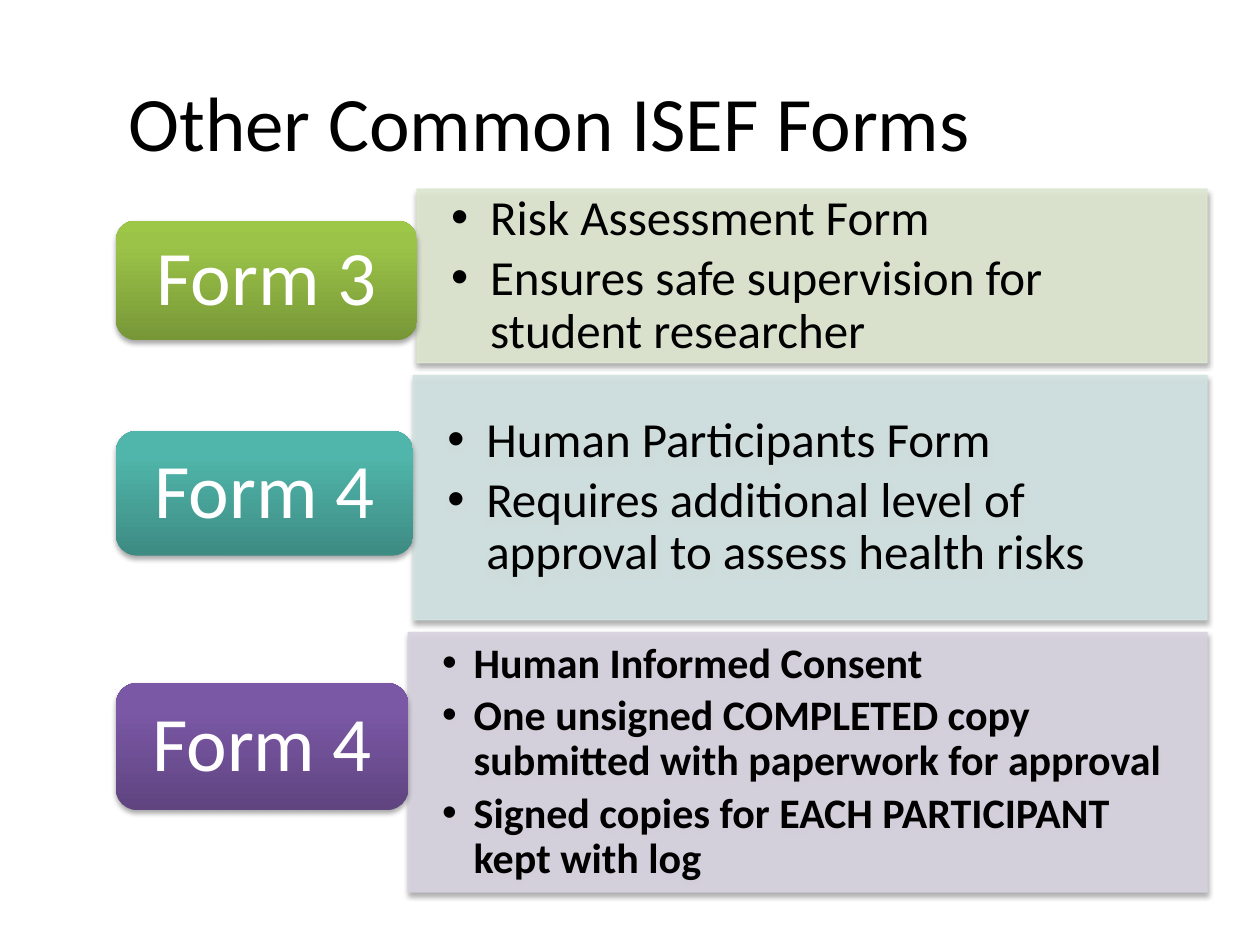
"""Build the slide that pairs each common ISEF form with its purpose."""
from copy import deepcopy
from dataclasses import dataclass

from pptx import Presentation
from pptx.dml.color import RGBColor
from pptx.enum.shapes import MSO_SHAPE
from pptx.enum.text import MSO_ANCHOR, PP_ALIGN
from pptx.oxml.ns import qn
from pptx.util import Inches, Pt

RECTANGLE = MSO_SHAPE.RECTANGLE
ROUNDED = MSO_SHAPE.ROUNDED_RECTANGLE
MIDDLE = MSO_ANCHOR.MIDDLE
LEFT, CENTER = PP_ALIGN.LEFT, PP_ALIGN.CENTER
TITLE_ONLY = 5
PAGE_WIDTH, PAGE_HEIGHT = Inches(10), Inches(7.5)
COLUMNS, ROWS = 1000, 750
LABEL_LEFT, PANEL_RIGHT = 92, 958
FIRST_TOP, PANEL_GAP = 150, 10


@dataclass(frozen=True)
class Theme:
    """Colours, font and type sizes of the slide."""
    font: str = "Calibri"
    ink: str = "000000"
    label_ink: str = "FFFFFF"
    heading_size: int = 44
    line_spacing: float = 0.9
    label_after: int = 15
    bullet_after: int = 4
    panel_opacity: int = 90
    shadow_opacity: int = 35


@dataclass(frozen=True)
class Area:
    """A rectangle in grid columns and rows."""
    left: float
    top: float
    width: float
    height: float

    def emu(self) -> tuple[int, int, int, int]:
        """Convert the grid rectangle to slide lengths."""
        across, down = PAGE_WIDTH / COLUMNS, PAGE_HEIGHT / ROWS
        return (round(self.left * across), round(self.top * down),
                round(self.width * across), round(self.height * down))


@dataclass(frozen=True)
class Form:
    """One form: its label, its panel and the points it makes."""
    name: str
    label_top: float
    label_width: float
    label_height: float
    gradient: tuple[str, str, str]
    panel_height: float
    panel_color: str
    points: tuple[str, ...]
    size: int = 28
    indent: float = 0.31
    bold: bool = False


THEME = Theme()
FORMS = (
    Form("Form 3", 175, 239, 95, ("779737", "9BC348", "9DC746"), 138, "DEE7D1",
         ("Risk Assessment Form",
          "Ensures safe supervision for student researcher")),
    Form("Form 4", 342, 236, 99, ("3D8B83", "50B5AA", "4EB8AC"), 194, "D2E3E2",
         ("Human Participants Form",
          "Requires additional level of approval to assess health risks")),
    Form("Form 4", 542, 232, 101, ("5F4480", "7B58A6", "7C57A8"), 206, "D8D3E0",
         ("Human Informed Consent",
          "One unsigned COMPLETED copy submitted with paperwork for approval",
          "Signed copies for EACH PARTICIPANT kept with log"),
         size=24, indent=0.25, bold=True),
)


def add_child(parent, tag: str, **attributes):
    """Append a drawing element with its attributes."""
    child = parent.makeelement(qn(tag), {key: str(value) for key, value in attributes.items()})
    parent.append(child)
    return child


def add_shadow(shape) -> None:
    """Give the shape a soft shadow that falls straight down."""
    shape.shadow.inherit = False
    effects = shape._element.spPr.find(qn("a:effectLst"))
    shadow = add_child(effects, "a:outerShdw", blurRad=Pt(3.1), dist=Pt(1.8),
                       dir=90 * 60000, rotWithShape=0)
    color = add_child(shadow, "a:srgbClr", val="000000")
    add_child(color, "a:alpha", val=THEME.shadow_opacity * 1000)


def prepare_frame(shape, side: float, edge: float):
    """Centre the text vertically and set its insets."""
    frame = shape.text_frame
    frame.word_wrap = True
    frame.vertical_anchor = MIDDLE
    frame.margin_left = frame.margin_right = Inches(side)
    frame.margin_top = frame.margin_bottom = Inches(edge)
    return frame


def style_paragraph(para, size: int, color: str, align, after: int, bold: bool = False) -> None:
    """Set the spacing, alignment and font of a paragraph."""
    para.alignment = align
    para.line_spacing = THEME.line_spacing
    para.space_after = Pt(after)
    para.font.name = THEME.font
    para.font.size = Pt(size)
    para.font.bold = bold
    para.font.color.rgb = RGBColor.from_string(color)


def add_bullet(para, indent: float) -> None:
    """Hang the paragraph behind a round bullet."""
    properties = para._p.get_or_add_pPr()
    properties.set("marL", str(Inches(indent)))
    properties.set("indent", str(-Inches(indent)))
    add_child(properties, "a:buFont", typeface="Arial")
    add_child(properties, "a:buChar", char="•")


def draw_panel(page, form: Form, top: float) -> None:
    """Draw the tinted panel with the points of a form."""
    left = LABEL_LEFT + form.label_width
    area = Area(left, top, PANEL_RIGHT - left, form.panel_height)
    panel = page.shapes.add_shape(RECTANGLE, *area.emu())
    panel.fill.solid()
    panel.line.width = Pt(0.75)
    for color in (panel.fill.fore_color, panel.line.color):
        color.rgb = RGBColor.from_string(form.panel_color)
    for color in panel._element.spPr.iter(qn("a:srgbClr")):
        add_child(color, "a:alpha", val=THEME.panel_opacity * 1000)
    add_shadow(panel)
    frame = prepare_frame(panel, 0.27, 0.14)
    for index, point in enumerate(form.points):
        para = frame.add_paragraph() if index else frame.paragraphs[0]
        para.text = point
        add_bullet(para, form.indent)
        style_paragraph(para, form.size, THEME.ink, LEFT, THEME.bullet_after, form.bold)


def draw_label(page, form: Form) -> None:
    """Draw the rounded gradient label that names a form."""
    area = Area(LABEL_LEFT, form.label_top, form.label_width, form.label_height)
    label = page.shapes.add_shape(ROUNDED, *area.emu())
    label.fill.gradient()
    label.fill.gradient_angle = 90
    stops = label._element.spPr.find(".//" + qn("a:gsLst"))
    stops.append(deepcopy(stops[0]))
    for stop, position, color in zip(label.fill.gradient_stops, (0, 0.8, 1), form.gradient):
        stop.position = position
        stop.color.rgb = RGBColor.from_string(color)
    label.line.fill.background()
    add_shadow(label)
    para = prepare_frame(label, 0.18, 0.09).paragraphs[0]
    para.text = form.name
    style_paragraph(para, THEME.heading_size, THEME.label_ink, CENTER, THEME.label_after)


def draw_title(page, text: str) -> None:
    """Place and format the slide title."""
    title = page.shapes.title
    title.left, title.top, title.width, title.height = Area(LABEL_LEFT, 33, 883, 125).emu()
    title.text_frame.vertical_anchor = MIDDLE
    para = title.text_frame.paragraphs[0]
    para.text = text
    para.alignment = LEFT
    para.font.name = THEME.font
    para.font.size = Pt(THEME.heading_size)
    para.font.color.rgb = RGBColor.from_string(THEME.ink)


def main() -> None:
    """Build and save the deck."""
    deck = Presentation()
    deck.slide_width, deck.slide_height = PAGE_WIDTH, PAGE_HEIGHT
    page = deck.slides.add_slide(deck.slide_layouts[TITLE_ONLY])
    draw_title(page, "Other Common ISEF Forms")
    top = FIRST_TOP
    for form in FORMS:
        draw_panel(page, form, top)
        draw_label(page, form)
        top += form.panel_height + PANEL_GAP
    deck.save("out.pptx")


if __name__ == "__main__":
    main()
